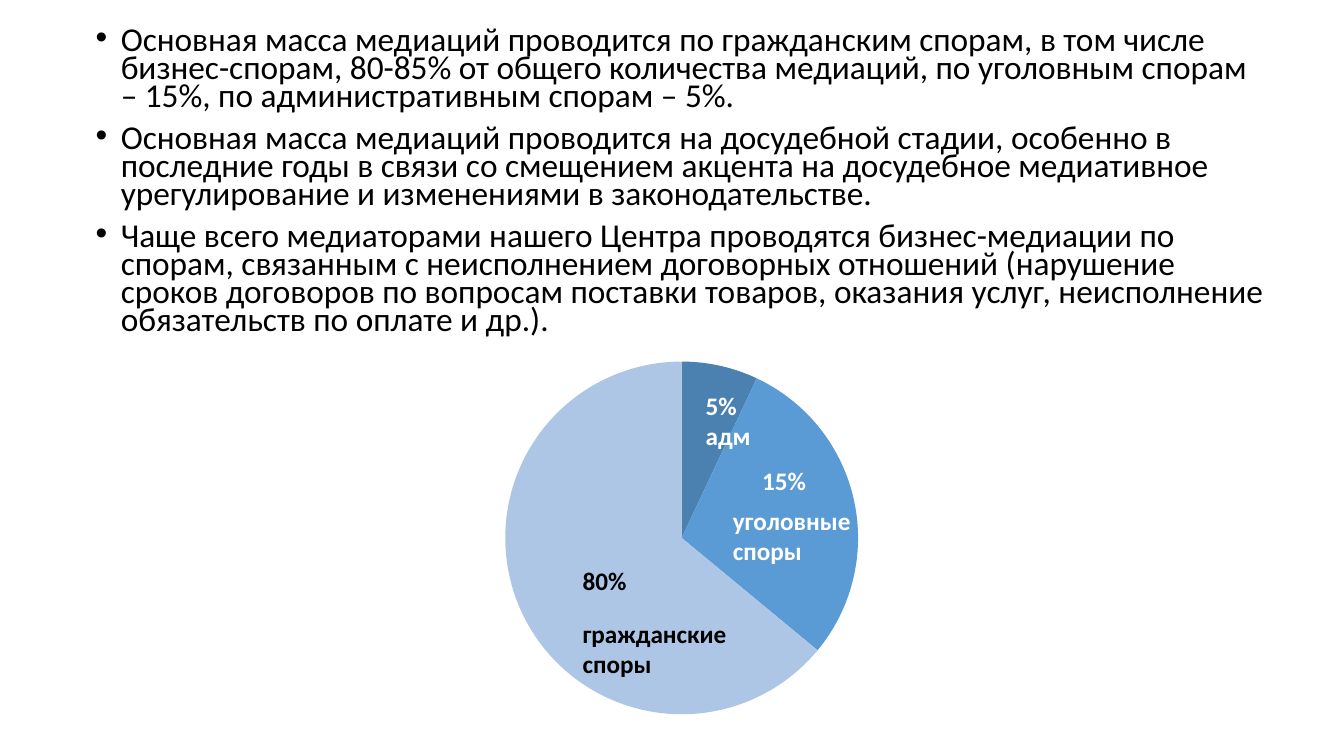
from lxml import etree
from pptx import Presentation
from pptx.chart.data import CategoryChartData
from pptx.dml.color import RGBColor
from pptx.enum import chart as charts
from pptx.oxml import ns, parse_xml
from pptx.util import Inches, Pt

BLACK = RGBColor(0x00, 0x00, 0x00)
WHITE = RGBColor(0xFF, 0xFF, 0xFF)
SLICE_COLORS = (
    RGBColor(0x4B, 0x81, 0xB1),
    RGBColor(0x5B, 0x9B, 0xD5),
    RGBColor(0xAD, 0xC6, 0xE5),
)

FINDINGS = (
    "Основная масса медиаций проводится по гражданским спорам, в том числе бизнес-спорам, "
    "80-85% от общего количества медиаций, по уголовным спорам – 15%, "
    "по административным спорам – 5%.",
    "Основная масса медиаций проводится на досудебной стадии, особенно в последние годы "
    "в связи со смещением акцента на досудебное медиативное урегулирование "
    "и изменениями в законодательстве.",
    "Чаще всего медиаторами нашего Центра проводятся бизнес-медиации по спорам, связанным "
    "с неисполнением договорных отношений (нарушение сроков договоров по вопросам поставки "
    "товаров, оказания услуг, неисполнение обязательств по оплате и др.).",
)
SERIES = {
    "Series 1": (7, 29, 64),
    "Series 2": (29, 37, 33),
    "Series 3": (33, 34, 33),
}
PLOT_LAYOUT = {"x": 0.18, "y": 0.08, "w": 0.52, "h": 0.85}
LABELS = (
    (5.68, 5.56, 6.67, 0.4, BLACK, ("80%",)),
    (7.17, 4.96, 3.67, 0.71, WHITE, ("уголовные", "споры")),
    (7.46, 4.57, 6.67, 0.4, WHITE, ("15%",)),
    (5.68, 6.08, 7.16, 0.71, BLACK, ("гражданские", "споры")),
    (6.9, 3.82, 7.07, 0.71, WHITE, ("5%", "адм")),
)


def set_font(font, size, color, bold):
    values = {"name": "Calibri", "size": Pt(size), "bold": bold}
    for name, value in values.items():
        setattr(font, name, value)
    font.color.rgb = color


def add_text(page, left, top, width, height, lines, size, color, bold):
    box = page.shapes.add_textbox(*map(Inches, (left, top, width, height)))
    frame = box.text_frame
    frame.word_wrap = True
    frame.text = "\n".join(lines)
    for para in frame.paragraphs:
        for span in para.runs:
            set_font(span.font, size, color, bold)
    return frame.paragraphs


def add_bullets(page):
    paragraphs = add_text(page, 0.85, 0.24, 11.8, 3.39, FINDINGS, 23.8, BLACK, False)
    for index, para in enumerate(paragraphs):
        para.line_spacing = 0.7
        para.space_before = Pt(10 if index else 0)
        properties = para._p.get_or_add_pPr()
        properties.set("marL", str(Inches(0.25)))
        properties.set("indent", str(-Inches(0.25)))
        etree.SubElement(properties, ns.qn("a:buFont")).set("typeface", "Arial")
        etree.SubElement(properties, ns.qn("a:buChar")).set("char", "•")


def place_plot(chart):
    area = chart._chartSpace.chart.plotArea
    for layout in area.findall(ns.qn("c:layout")):
        area.remove(layout)
    layout = etree.Element(ns.qn("c:layout"))
    manual = etree.SubElement(layout, ns.qn("c:manualLayout"))
    modes = {"layoutTarget": "inner", "xMode": "edge", "yMode": "edge"}
    for name, value in {**modes, **PLOT_LAYOUT}.items():
        etree.SubElement(manual, ns.qn(f"c:{name}")).set("val", str(value))
    area.insert(0, layout)


def clear_background(chart):
    blank = parse_xml(
        f"<c:spPr {ns.nsdecls('c', 'a')}><a:noFill/><a:ln><a:noFill/></a:ln></c:spPr>"
    )
    chart._chartSpace.chart.addnext(blank)


def add_pie(page):
    data = CategoryChartData()
    data.categories = ("1", "2", "3")
    for name, values in SERIES.items():
        data.add_series(name, values)
    frame = page.shapes.add_chart(
        charts.XL_CHART_TYPE.PIE, *map(Inches, (3.8, 3.08, 6.73, 4.47)), data
    )
    chart = frame.chart
    chart.replace_data(data)
    chart.has_title = False
    chart.has_legend = False
    set_font(chart.font, 8.5, BLACK, True)
    chart.plots[0].vary_by_categories = True
    for series in chart.plots[0].series:
        for index, color in enumerate(SLICE_COLORS):
            slice_format = series.points[index].format
            slice_format.fill.solid()
            slice_format.fill.fore_color.rgb = color
            slice_format.line.fill.background()
    place_plot(chart)
    clear_background(chart)


def main():
    deck = Presentation()
    deck.slide_width = Inches(13.33)
    deck.slide_height = Inches(7.5)
    page = deck.slides.add_slide(deck.slide_layouts[6])
    add_bullets(page)
    add_pie(page)
    for left, top, width, height, color, lines in LABELS:
        add_text(page, left, top, width, height, lines, 18, color, True)
    deck.save("out.pptx")


if __name__ == "__main__":
    main()
